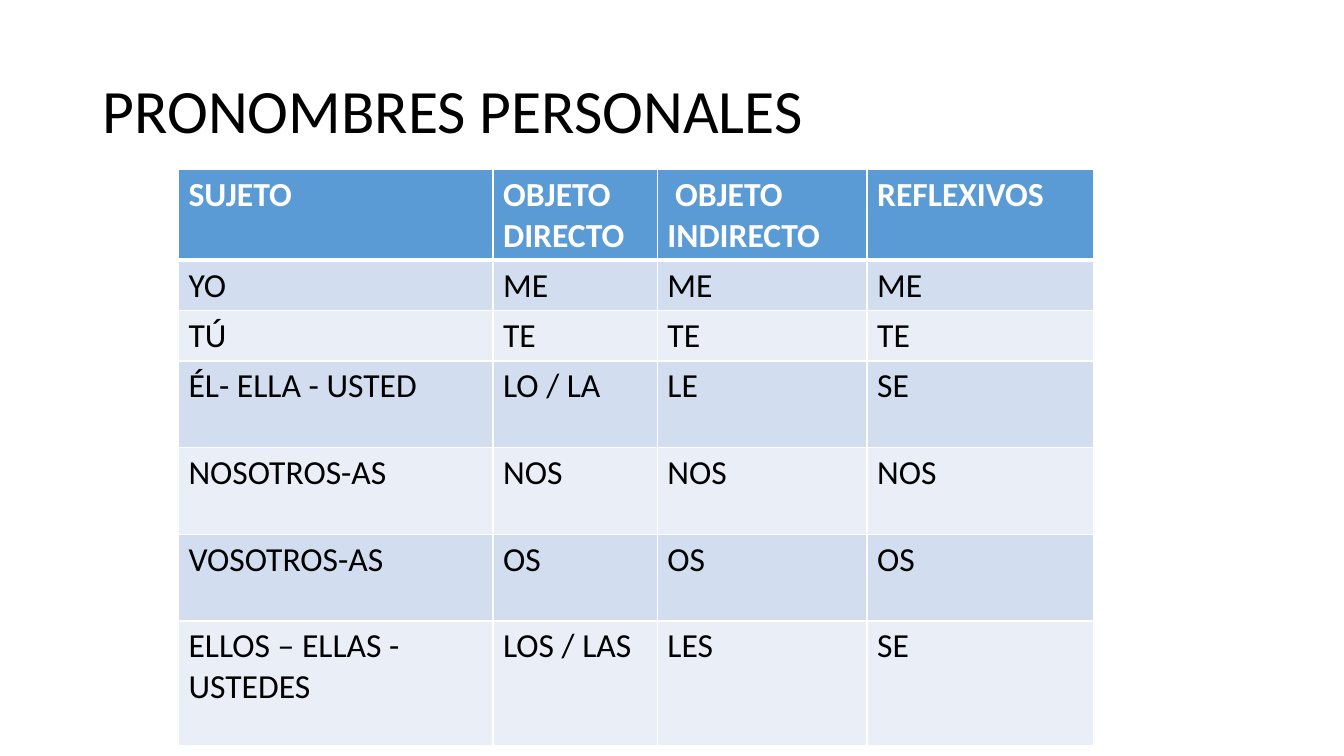
from lxml import etree
from pptx import Presentation
from pptx.dml.color import RGBColor
from pptx.enum.text import MSO_ANCHOR as Anchor
from pptx.oxml.ns import qn
from pptx.util import Inches, Pt

WHITE, BLACK = "FFFFFF", "000000"
HEADER_FILL, BAND_FILLS = "5B9BD5", ("D2DEEF", "EAEFF7")

COLUMN_WIDTHS = (3.12, 1.63, 2.08, 2.25)
ROW_HEIGHTS = (0.86, 0.48, 0.48, 0.86, 0.86, 0.86, 1.24)
PRONOUNS = (
    ("SUJETO", "OBJETO DIRECTO", " OBJETO INDIRECTO", "REFLEXIVOS"),
    ("YO", "ME", "ME", "ME"),
    ("TÚ", "TE", "TE", "TE"),
    ("ÉL- ELLA - USTED", "LO / LA", "LE", "SE"),
    ("NOSOTROS-AS", "NOS", "NOS", "NOS"),
    ("VOSOTROS-AS", "OS", "OS", "OS"),
    ("ELLOS – ELLAS - USTEDES", "LOS / LAS", "LES", "SE"),
)


def color(hex_value):
    return RGBColor.from_string(hex_value)


def write(frame, text, hex_value, **font_format):
    """Put one run of formatted text in a frame and return its paragraph."""
    para = frame.paragraphs[0]
    span = para.add_run()
    span.text = text
    span.font.color.rgb = color(hex_value)
    for name, value in {"name": "Calibri", **font_format}.items():
        setattr(span.font, name, value)
    return para


def add_title(page, text):
    box = page.shapes.add_textbox(Inches(0.92), Inches(0.4), Inches(11.5), Inches(1.45))
    frame = box.text_frame
    frame.word_wrap = True
    frame.vertical_anchor = Anchor.MIDDLE
    write(frame, text, BLACK, size=Pt(44)).line_spacing = 0.9


def set_borders(cell, widths):
    properties = cell._tc.get_or_add_tcPr()
    for side, width in widths.items():
        line = etree.SubElement(properties, qn(f"a:ln{side}"), w=str(Pt(width)))
        fill = etree.SubElement(line, qn("a:solidFill"))
        etree.SubElement(fill, qn("a:srgbClr"), val=WHITE)


def style_cell(cell, text, row):
    is_header = row == 0
    # A thicker rule parts the header from the body
    set_borders(cell, {"L": 1, "R": 1, "T": 3 if row == 1 else 1, "B": 3 if is_header else 1})
    cell.fill.solid()
    cell.fill.fore_color.rgb = color(HEADER_FILL if is_header else BAND_FILLS[(row - 1) % 2])
    write(cell.text_frame, text, WHITE if is_header else BLACK, size=Pt(24), bold=is_header)


def add_pronoun_table(page):
    table = page.shapes.add_table(
        len(PRONOUNS), len(COLUMN_WIDTHS), Inches(1.77), Inches(1.68),
        Inches(sum(COLUMN_WIDTHS)), Inches(sum(ROW_HEIGHTS))).table
    for column, width in zip(table.columns, COLUMN_WIDTHS):
        column.width = Inches(width)
    for row, height in zip(table.rows, ROW_HEIGHTS):
        row.height = Inches(height)
    for row, texts in enumerate(PRONOUNS):
        for column, text in enumerate(texts):
            style_cell(table.cell(row, column), text, row)


def main():
    deck = Presentation()
    deck.slide_width, deck.slide_height = Inches(13.33), Inches(7.5)
    page = deck.slides.add_slide(deck.slide_layouts[6])

    # Heading, then the table of pronouns
    add_title(page, "PRONOMBRES PERSONALES")
    add_pronoun_table(page)
    deck.save("out.pptx")


if __name__ == "__main__":
    main()
